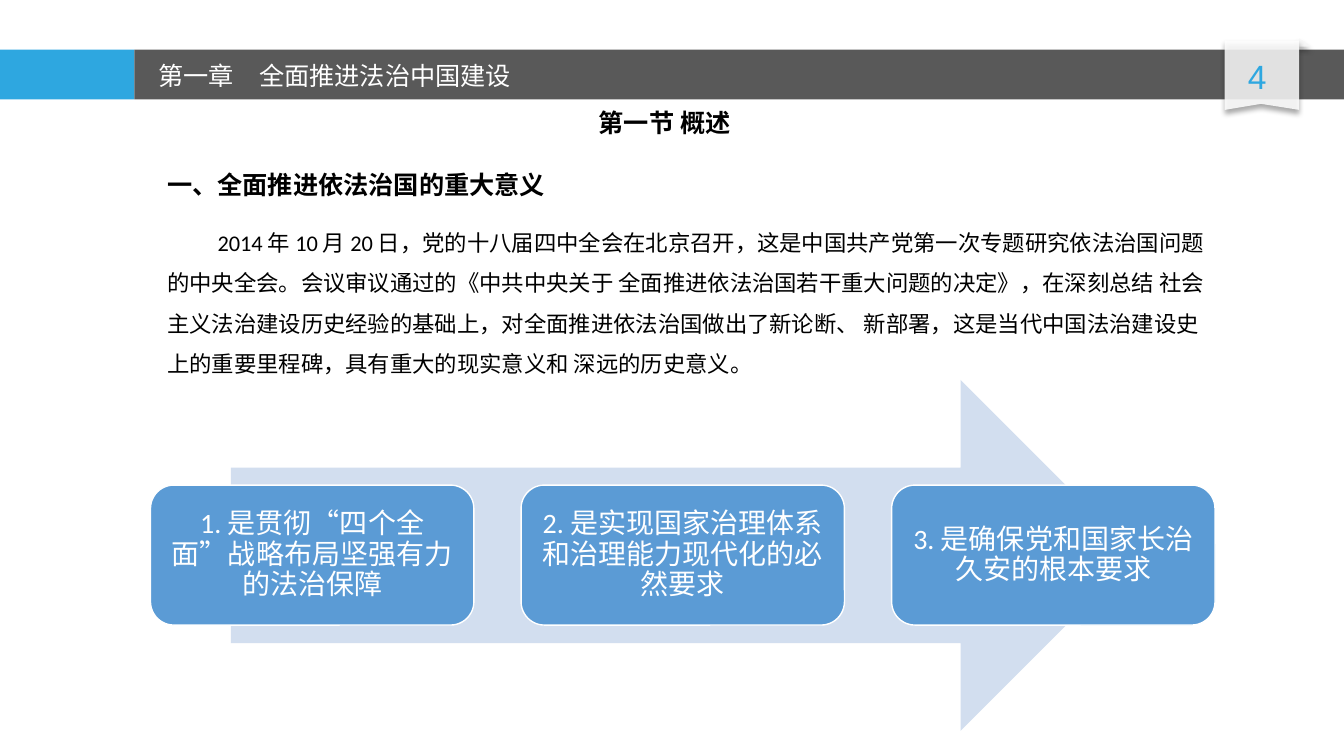
from lxml.etree import SubElement
from pptx import Presentation
from pptx.dml.color import RGBColor
from pptx.enum.shapes import MSO_SHAPE as Shape
from pptx.enum.text import MSO_ANCHOR as Anchor, MSO_AUTO_SIZE as AutoSize, PP_ALIGN as Align
from pptx.oxml.ns import qn
from pptx.util import Pt

WHITE = RGBColor(0xFF, 0xFF, 0xFF)
BLACK = RGBColor(0x00, 0x00, 0x00)
ACCENT = RGBColor(0x2E, 0xA7, 0xE0)
BAR_GREY = RGBColor(0x59, 0x59, 0x59)
FOLD_GREY = RGBColor(0xF8, 0xF8, 0xF8)
ARROW_BLUE = RGBColor(0xD2, 0xDE, 0xEF)
CARD_BLUE = RGBColor(0x5B, 0x9B, 0xD5)

CJK_FONT = "Noto Sans CJK SC"
BAR_TOP, BAR_HEIGHT, BAR_SPLIT, SLIDE_WIDTH = 35.5, 35.5, 96, 960
CARD_LEFT, CARD_TOP, CARD_WIDTH, CARD_HEIGHT, CARD_STEP = 107.5, 346.5, 231, 100, 264.7
RIBBON = [(874.8, 78.5), (874.8, 28.8), (928, 28.8), (928, 78.5), (900.8, 74.2)]

BODY = (
    "2014 年 10 月 20 日，党的十八届四中全会在北京召开，这是中国共产党第一次专题研究依法治国问题的中央全会。"
    "会议审议通过的《中共中央关于 全面推进依法治国若干重大问题的决定》，在深刻总结 "
    "社会主义法治建设历史经验的基础上，对全面推进依法治国做出了新论断、 新部署，"
    "这是当代中国法治建设史上的重要里程碑，具有重大的现实意义和 深远的历史意义。"
)
CARDS = [
    "1. 是贯彻“四个全面”战略布局坚强有力的法治保障",
    "2. 是实现国家治理体系和治理能力现代化的必然要求",
    "3. 是确保党和国家长治久安的根本要求",
]


def write(shape, text, size, color, name="Calibri", bold=False, align=Align.LEFT,
          anchor=Anchor.TOP, line_spacing=1.0, indent=0):
    frame = shape.text_frame
    frame_format = {"word_wrap": True, "auto_size": AutoSize.NONE, "vertical_anchor": anchor}
    for key, value in frame_format.items():
        setattr(frame, key, value)
    paragraph = frame.paragraphs[0]
    paragraph.alignment = align
    paragraph.line_spacing = line_spacing
    if indent:
        paragraph._p.get_or_add_pPr().set("indent", str(Pt(indent)))
    run = paragraph.add_run()
    run.text = text
    for key, value in {"size": Pt(size), "bold": bold, "name": name}.items():
        setattr(run.font, key, value)
    run.font.color.rgb = color
    SubElement(run._r.get_or_add_rPr(), qn("a:ea"), typeface=CJK_FONT)


def add_text(slide, box, text, size, color, **options):
    shape = slide.shapes.add_textbox(*map(Pt, box))
    write(shape, text, size, color, **options)


def paint(shape, fill, line=None):
    shape.shadow.inherit = False
    shape.fill.solid()
    shape.fill.fore_color.rgb = fill
    if line is None:
        shape.line.fill.background()
    else:
        shape.line.color.rgb = line
        shape.line.width = Pt(1)


def add_block(slide, kind, box, fill, line=None):
    shape = slide.shapes.add_shape(kind, *map(Pt, box))
    paint(shape, fill, line)
    return shape


def float_paper(shape):
    """Make the fill slightly transparent and give the shape a soft shadow below."""
    properties = shape._element.spPr
    fill_color = properties.find(qn("a:solidFill"))[0]
    SubElement(fill_color, qn("a:alpha"), val="85000")
    shadow = SubElement(properties.find(qn("a:effectLst")), qn("a:outerShdw"),
                        blurRad=str(Pt(4)), dist=str(Pt(3)), dir="5400000",
                        algn="t", rotWithShape="0")
    shadow_color = SubElement(shadow, qn("a:srgbClr"), val="000000")
    SubElement(shadow_color, qn("a:alpha"), val="40000")


def add_header(slide):
    add_block(slide, Shape.RECTANGLE, (0, BAR_TOP, BAR_SPLIT, BAR_HEIGHT), ACCENT)
    add_block(slide, Shape.RECTANGLE,
              (BAR_SPLIT, BAR_TOP, SLIDE_WIDTH - BAR_SPLIT, BAR_HEIGHT), BAR_GREY)
    float_paper(add_block(slide, Shape.RIGHT_TRIANGLE, (928, 27.4, 8.4, 5.8), FOLD_GREY))
    start, *others = [(Pt(x), Pt(y)) for x, y in RIBBON]
    builder = slide.shapes.build_freeform(*start)
    builder.add_line_segments(others, close=True)
    ribbon = builder.convert_to_shape()
    paint(ribbon, WHITE)
    float_paper(ribbon)
    add_text(slide, (864.7, 36.7, 73.4, 36), "4 ", 24, ACCENT, name="Arial", align=Align.CENTER)
    add_text(slide, (106, 39.6, 363, 29), "第一章　全面推进法治中国建设", 18, WHITE, name=CJK_FONT)


def place_title(slide, box, text):
    title = slide.shapes.title
    for key, value in zip(("left", "top", "width", "height"), box):
        setattr(title, key, Pt(value))
    write(title, text, 18, BLACK, bold=True)


def add_card(slide, index, text):
    box = (CARD_LEFT + index * CARD_STEP, CARD_TOP, CARD_WIDTH, CARD_HEIGHT)
    card = add_block(slide, Shape.ROUNDED_RECTANGLE, box, CARD_BLUE, WHITE)
    for side in ("left", "top", "right", "bottom"):
        setattr(card.text_frame, f"margin_{side}", Pt(6))
    write(card, text, 20, WHITE, align=Align.CENTER, anchor=Anchor.MIDDLE, line_spacing=0.9)


def main():
    presentation = Presentation()
    presentation.slide_width, presentation.slide_height = Pt(SLIDE_WIDTH), Pt(540)
    slide = presentation.slides.add_slide(presentation.slide_layouts[5])
    add_header(slide)
    place_title(slide, (420.5, 72.7, 118, 29), "第一节 概述")
    add_text(slide, (112.3, 117.4, 382, 29), "一、全面推进依法治国的重大意义", 18, BLACK, bold=True)
    add_text(slide, (112.3, 150.5, 764.6, 120), BODY, 16, BLACK, line_spacing=1.5, indent=36)
    add_block(slide, Shape.RIGHT_ARROW, (164.9, 271.4, 646.6, 250.6), ARROW_BLUE)
    for index, text in enumerate(CARDS):
        add_card(slide, index, text)
    presentation.save("out.pptx")


if __name__ == "__main__":
    main()
